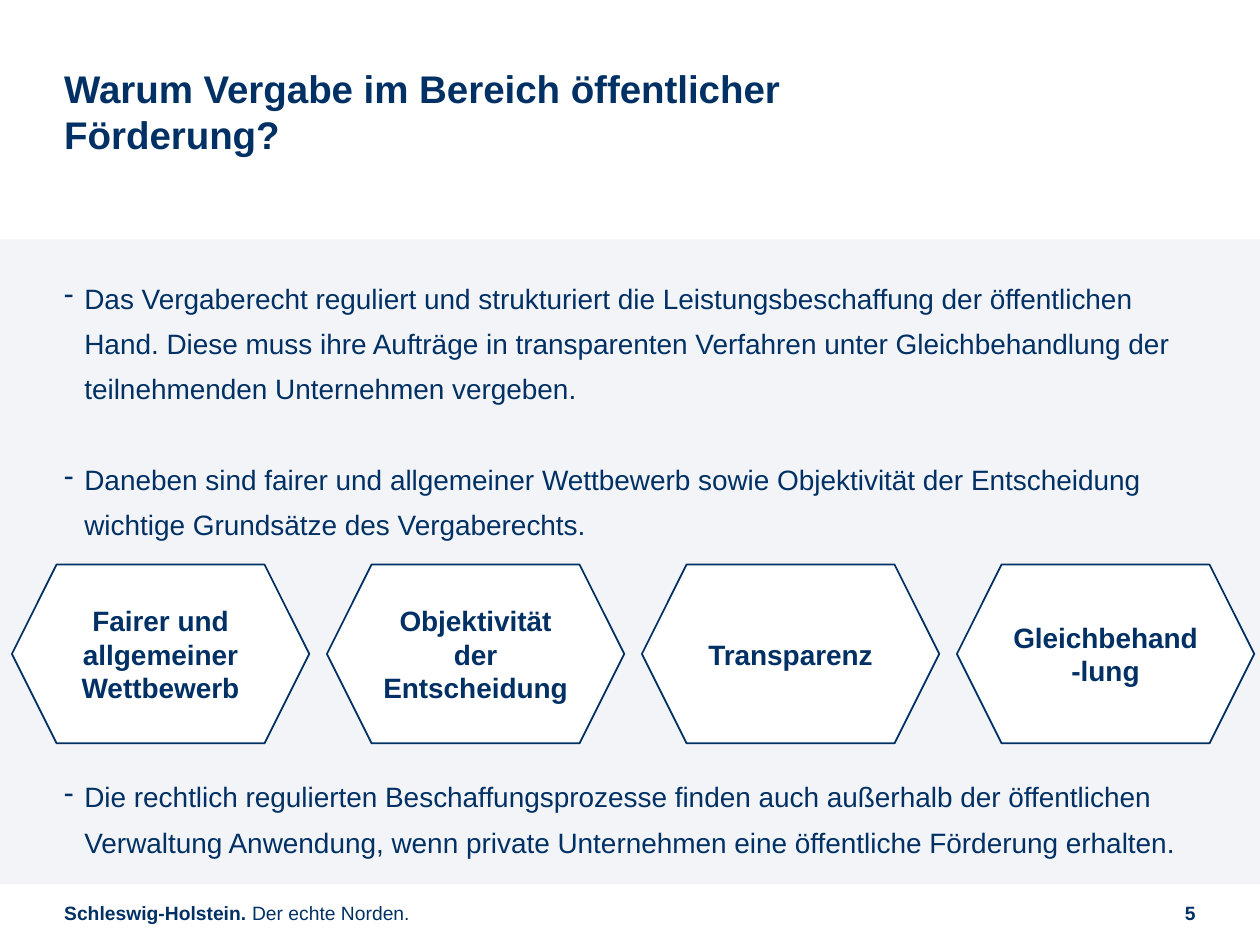
from dataclasses import dataclass

import pptx
import pptx.dml.color
import pptx.enum.shapes
import pptx.enum.text
import pptx.oxml
import pptx.oxml.ns
import pptx.util

Align = pptx.enum.text.PP_ALIGN
Anchor = pptx.enum.text.MSO_ANCHOR
Shape = pptx.enum.shapes.MSO_SHAPE
Inches = pptx.util.Inches
Pt = pptx.util.Pt

WIDTH, HEIGHT = Inches(10), Inches(7.5)
COLUMNS, ROWS = 100, 75


@dataclass(frozen=True)
class Theme:
    navy: str = "003064"
    panel: str = "F2F4F7"
    white: str = "FFFFFF"
    font: str = "Arial"
    title_size: int = 22
    text_size: int = 16
    footer_size: int = 11


@dataclass(frozen=True)
class Area:
    """A rectangle in columns and rows of the page grid."""
    column: float
    row: float
    columns: float
    rows: float

    def place(self) -> tuple[int, int, int, int]:
        return (int(WIDTH * self.column / COLUMNS), int(HEIGHT * self.row / ROWS),
                int(WIDTH * self.columns / COLUMNS), int(HEIGHT * self.rows / ROWS))


@dataclass(frozen=True)
class Bullet:
    text: str
    gap_before: float = 0


THEME = Theme()
MARGIN = 5.1
CONTENT = COLUMNS - 2 * MARGIN

BULLETS = (
    Bullet("Das Vergaberecht reguliert und strukturiert die Leistungsbeschaffung "
           "der öffentlichen Hand. Diese muss ihre Aufträge in transparenten "
           "Verfahren unter Gleichbehandlung der teilnehmenden Unternehmen vergeben."),
    Bullet("Daneben sind fairer und allgemeiner Wettbewerb sowie Objektivität der "
           "Entscheidung wichtige Grundsätze des Vergaberechts.", 26),
    Bullet("Die rechtlich regulierten Beschaffungsprozesse finden auch außerhalb "
           "der öffentlichen Verwaltung Anwendung, wenn private Unternehmen eine "
           "öffentliche Förderung erhalten.", 129.5),
)
PRINCIPLES = ("Fairer und allgemeiner Wettbewerb", "Objektivität der Entscheidung",
              "Transparenz", "Gleichbehand-lung")


def color(value: str) -> pptx.dml.color.RGBColor:
    return pptx.dml.color.RGBColor.from_string(value)


def add_span(para, text: str, *, size: float, bold: bool = False) -> None:
    span = para.add_run()
    span.text = text
    span.font.name = THEME.font
    span.font.size = Pt(size)
    span.font.bold = bold
    span.font.color.rgb = color(THEME.navy)


def prepare_frame(box, *, anchor=Anchor.TOP, inset: float = 0, bottom: float = 0):
    frame = box.text_frame
    frame.auto_size = pptx.enum.text.MSO_AUTO_SIZE.NONE
    frame.word_wrap = True
    frame.vertical_anchor = anchor
    frame.margin_left = frame.margin_right = frame.margin_top = Inches(inset)
    frame.margin_bottom = Inches(bottom or inset)
    return frame


def add_shape(page, kind, area: Area, fill: str, *, outlined: bool = False):
    shape = page.shapes.add_shape(kind, *area.place())
    shape.shadow.inherit = False
    shape.fill.solid()
    shape.fill.fore_color.rgb = color(fill)
    if outlined:
        shape.line.color.rgb = color(THEME.navy)
        shape.line.width = Pt(1)
    else:
        shape.line.fill.background()
    return shape


def set_dash(para) -> None:
    properties = para._p.get_or_add_pPr()
    properties.set("marL", str(Inches(0.16)))
    properties.set("indent", str(-Inches(0.16)))
    dash = pptx.oxml.parse_xml(f'<a:buChar {pptx.oxml.ns.nsdecls("a")} char="-"/>')
    properties.append(dash)


def add_title(page, text: str) -> None:
    title = page.shapes.title
    title.left, title.top, title.width, title.height = Area(MARGIN, 6, 65.4, 10).place()
    # The deep bottom inset lifts the two lines clear of the panel
    frame = prepare_frame(title, anchor=Anchor.BOTTOM, bottom=0.35)
    para = frame.paragraphs[0]
    para.alignment = Align.LEFT
    para.line_spacing = 1.0
    para.space_before = Pt(0)
    add_span(para, text, size=THEME.title_size, bold=True)


def add_bullets(page, area: Area, bullets: tuple[Bullet, ...]) -> None:
    frame = prepare_frame(page.shapes.add_textbox(*area.place()))
    for index, bullet in enumerate(bullets):
        para = frame.add_paragraph() if index else frame.paragraphs[0]
        set_dash(para)
        para.line_spacing = 1.35
        if bullet.gap_before:
            para.space_before = Pt(bullet.gap_before)
        add_span(para, bullet.text, size=THEME.text_size)


def add_principle(page, area: Area, text: str) -> None:
    hexagon = add_shape(page, Shape.HEXAGON, area, THEME.white, outlined=True)
    frame = prepare_frame(hexagon, anchor=Anchor.MIDDLE, inset=0.1, bottom=0.05)
    frame.margin_top = Inches(0.05)
    para = frame.paragraphs[0]
    para.alignment = Align.CENTER
    add_span(para, text, size=THEME.text_size, bold=True)


def add_footer(page, area: Area, *spans: tuple[str, bool], align=Align.LEFT) -> None:
    frame = prepare_frame(page.shapes.add_textbox(*area.place()), anchor=Anchor.MIDDLE)
    para = frame.paragraphs[0]
    para.alignment = align
    for text, bold in spans:
        add_span(para, text, size=THEME.footer_size, bold=bold)


def main() -> None:
    deck = pptx.Presentation()
    deck.slide_width, deck.slide_height = WIDTH, HEIGHT
    page = deck.slides.add_slide(deck.slide_layouts.get_by_name("Title Only"))

    # Panel behind the content
    add_shape(page, Shape.RECTANGLE, Area(0, 19, COLUMNS, 51.2), THEME.panel)

    # Footer
    add_footer(page, Area(MARGIN, 71, 32.3, 2.9),
               ("Schleswig-Holstein.", True), (" Der echte Norden.", False))
    add_footer(page, Area(COLUMNS - MARGIN - 7.9, 71, 7.9, 2.9), ("5", True),
               align=Align.RIGHT)

    # Title and statements
    add_title(page, "Warum Vergabe im Bereich öffentlicher Förderung?")
    add_bullets(page, Area(MARGIN, 21.4, CONTENT, 46.8), BULLETS)

    # One hexagon per principle, evenly spread over the page
    pitch = COLUMNS / len(PRINCIPLES)
    for index, principle in enumerate(PRINCIPLES):
        add_principle(page, Area(0.95 + index * pitch, 44.8, 23.6, 14.2), principle)

    deck.save("out.pptx")


if __name__ == "__main__":
    main()
